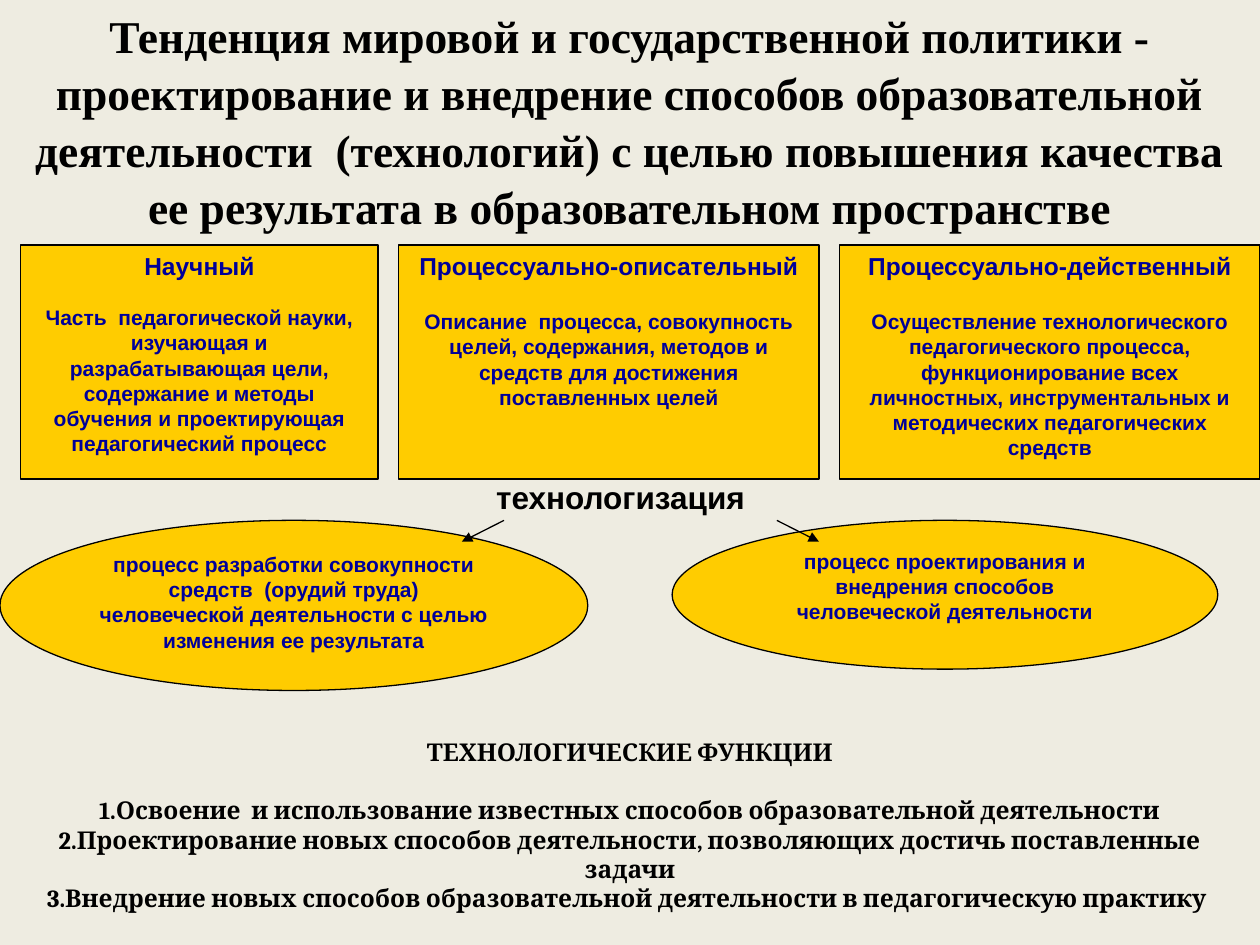
from typing import NamedTuple

from lxml.etree import SubElement
from pptx import Presentation
from pptx.dml.color import RGBColor
from pptx.enum.shapes import MSO_CONNECTOR, MSO_SHAPE
from pptx.enum.text import MSO_ANCHOR, PP_ALIGN
from pptx.oxml.ns import qn
from pptx.util import Cm, Pt

BACKGROUND = RGBColor(0xEE, 0xEC, 0xE1)
GOLD = RGBColor(0xFF, 0xCC, 0x00)
NAVY = RGBColor(0x00, 0x00, 0x99)
BLACK = RGBColor(0x00, 0x00, 0x00)

GAP = 0.42
BOX_TOP, BOX_HEIGHT = 4.94, 4.72
OVAL_TOP = 10.49


class Line(NamedTuple):
    text: str
    size: float
    space_before: float = 0


class Aspect(NamedTuple):
    width: float
    heading: str
    description: str
    space_before: float


class Oval(NamedTuple):
    left: float
    width: float
    height: float
    text: str


class Arrow(NamedTuple):
    start_x: float
    end_x: float


class Label(NamedTuple):
    left: float
    top: float
    width: float
    height: float
    font: str
    lines: list[Line]
    line_spacing: float = 1.0


ASPECTS = [
    Aspect(7.2, "Научный",
           "Часть  педагогической науки, изучающая и разрабатывающая цели, "
           "содержание и методы обучения и проектирующая педагогический процесс", 13.8),
    Aspect(8.47, "Процессуально-описательный",
           "Описание  процесса, совокупность целей, содержания, методов и средств "
           "для достижения поставленных целей", 16.1),
    Aspect(8.47, "Процессуально-действенный",
           "Осуществление технологического педагогического процесса, функционирование "
           "всех личностных, инструментальных и методических педагогических средств", 16.1),
]
OVALS = [
    Oval(0, 11.85, 3.43,
         "процесс разработки совокупности средств  (орудий труда) "
         "человеческой деятельности с целью изменения ее результата"),
    Oval(13.55, 11, 3,
         "процесс проектирования и внедрения способов человеческой деятельности"),
]
ARROWS = [Arrow(10.16, 9.31), Arrow(15.66, 16.51)]
LABELS = [
    Label(8.31, 9.52, 8.4, 1.02, "Arial", [Line("технологизация", 18)]),
    Label(0, 0, 25.4, 4.7, "Times New Roman", [
        Line("Тенденция мировой и государственной политики - проектирование и внедрение "
             "способов образовательной деятельности  (технологий) с целью повышения "
             "качества ее результата в образовательном пространстве", 26)], 1.04),
    Label(0, 14.73, 25.4, 3.81, "Cambria", [
        Line("ТЕХНОЛОГИЧЕСКИЕ ФУНКЦИИ", 14),
        Line("1.Освоение  и использование известных способов образовательной "
             "деятельности", 14, 16.5),
        Line("2.Проектирование новых способов деятельности, позволяющих достичь "
             "поставленные задачи", 14),
        Line("3.Внедрение новых способов образовательной деятельности в "
             "педагогическую практику ", 14)]),
]


def write_lines(shape, lines: list[Line], font: str, color: RGBColor,
                line_spacing: float = 1.0) -> None:
    frame = shape.text_frame
    frame.word_wrap = True
    frame.vertical_anchor = MSO_ANCHOR.TOP
    for index, line in enumerate(lines):
        paragraph = frame.add_paragraph() if index else frame.paragraphs[0]
        paragraph.text = line.text
        paragraph.alignment = PP_ALIGN.CENTER
        paragraph.space_before = Pt(line.space_before)
        paragraph.line_spacing = line_spacing
        paragraph.font.name = font
        paragraph.font.size = Pt(line.size)
        paragraph.font.bold = True
        paragraph.font.color.rgb = color


def add_panel(slide, kind: MSO_SHAPE, left: float, top: float, width: float,
              height: float, lines: list[Line]) -> None:
    shape = slide.shapes.add_shape(kind, Cm(left), Cm(top), Cm(width), Cm(height))
    shape.shadow.inherit = False
    shape.fill.solid()
    shape.fill.fore_color.rgb = GOLD
    shape.line.color.rgb = BLACK
    shape.line.width = Pt(0.75)
    write_lines(shape, lines, "Arial", NAVY)


def add_arrow(slide, arrow: Arrow) -> None:
    connector = slide.shapes.add_connector(
        MSO_CONNECTOR.STRAIGHT, Cm(arrow.start_x), Cm(OVAL_TOP),
        Cm(arrow.end_x), Cm(OVAL_TOP + 0.43))
    connector.line.color.rgb = BLACK
    connector.line.width = Pt(0.75)
    SubElement(connector.line._get_or_add_ln(), qn("a:tailEnd"), type="triangle")
    SubElement(connector._element.spPr, qn("a:effectLst"))


def add_label(slide, label: Label) -> None:
    box = slide.shapes.add_textbox(
        Cm(label.left), Cm(label.top), Cm(label.width), Cm(label.height))
    write_lines(box, label.lines, label.font, BLACK, label.line_spacing)


def main() -> None:
    presentation = Presentation()
    presentation.slide_width, presentation.slide_height = Cm(25.4), Cm(19.05)
    slide = presentation.slides.add_slide(presentation.slide_layouts[6])
    slide.background.fill.solid()
    slide.background.fill.fore_color.rgb = BACKGROUND

    # Three aspects, side by side with equal gaps
    left = GAP
    for aspect in ASPECTS:
        lines = [Line(aspect.heading, 14),
                 Line(aspect.description, 12, aspect.space_before)]
        add_panel(slide, MSO_SHAPE.RECTANGLE, left, BOX_TOP, aspect.width, BOX_HEIGHT, lines)
        left += aspect.width + GAP

    # Two processes and the arrows that lead to them
    for oval in OVALS:
        add_panel(slide, MSO_SHAPE.OVAL, oval.left, OVAL_TOP, oval.width, oval.height,
                  [Line(oval.text, 12)])
    for arrow in ARROWS:
        add_arrow(slide, arrow)

    # Title, middle caption and list of functions
    for label in LABELS:
        add_label(slide, label)

    presentation.save("out.pptx")


if __name__ == "__main__":
    main()
